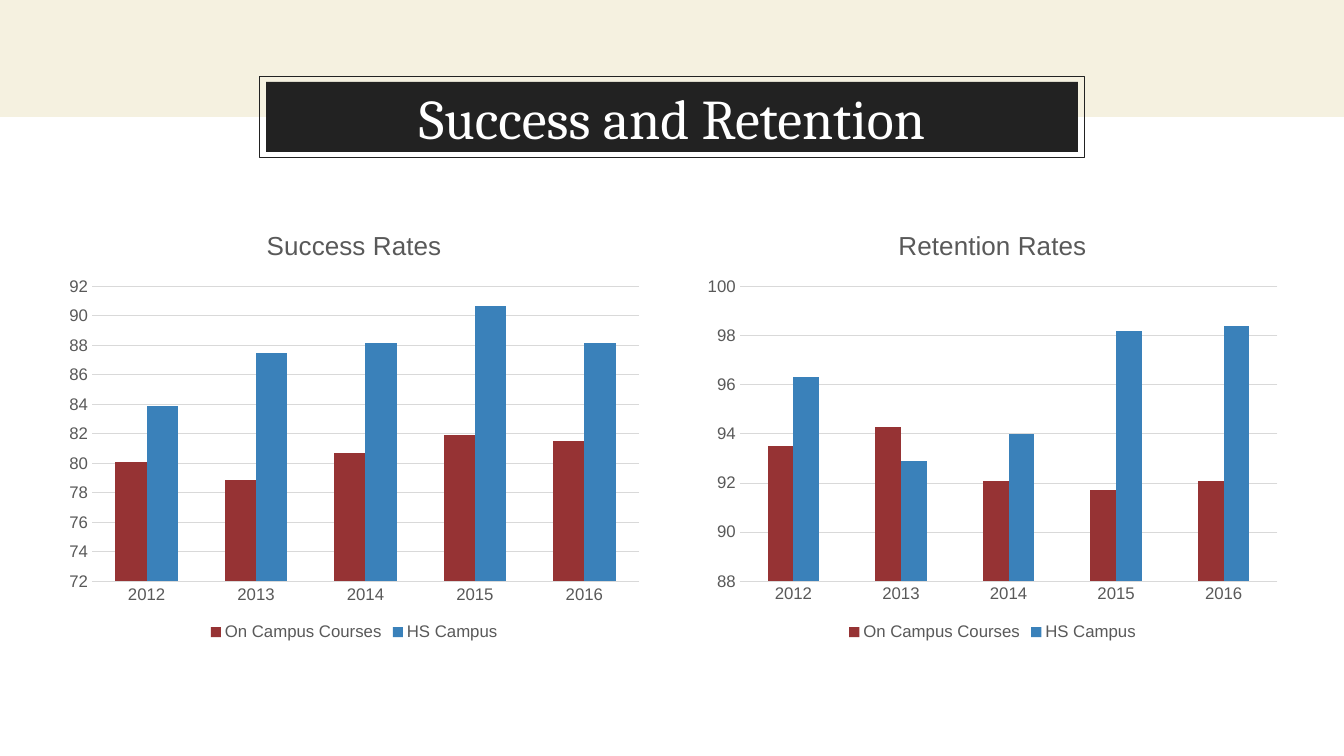
"""Build the Success and Retention slide with its two column charts."""
from pptx import Presentation
from pptx.chart.data import CategoryChartData
from pptx.dml.color import RGBColor
from pptx.enum.chart import XL_CHART_TYPE, XL_LEGEND_POSITION, XL_TICK_MARK
from pptx.enum.shapes import MSO_SHAPE
from pptx.enum.text import MSO_ANCHOR, MSO_AUTO_SIZE, PP_ALIGN
from pptx.util import Pt

CREAM = RGBColor(0xF5, 0xF1, 0xE0)
INK = RGBColor(0x22, 0x22, 0x22)
WHITE = RGBColor(0xFF, 0xFF, 0xFF)
BLACK = RGBColor(0, 0, 0)
GRAY = RGBColor(0x59, 0x59, 0x59)
RULE = RGBColor(0xD9, 0xD9, 0xD9)
RED = RGBColor(0x96, 0x33, 0x34)
BLUE = RGBColor(0x3A, 0x81, 0xBA)

HEADING = "Success and Retention"
YEARS = ["2012", "2013", "2014", "2015", "2016"]
GROUPS = [("On Campus Courses", RED), ("HS Campus", BLUE)]
RATES = [
    {
        "title": "Success Rates",
        "values": [(80.1, 78.9, 80.7, 81.9, 81.5), (83.9, 87.5, 88.2, 90.7, 88.2)],
        "range": (72, 92),
        "gap": 150,
    },
    {
        "title": "Retention Rates",
        "values": [(93.5, 94.3, 92.1, 91.7, 92.1), (96.3, 92.9, 94.0, 98.2, 98.4)],
        "range": (88, 100),
        "gap": 219,
    },
]

SLIDE_W, SLIDE_H = 960, 540
BAND_H = 83.5
FRAME_TOP, FRAME_W, FRAME_H = 54.7, 589.8, 57.8
TITLE_TOP, TITLE_W, TITLE_H = 58.4, 580, 50.2
CHART_LEFT, CHART_TOP, CHART_W, CHART_H = 41, 149.8, 424, 311
CHART_STEP = 456

HEADING_FONT = {"name": "Cambria", "size": Pt(40), "bold": False}
CHART_FONT = {"name": "Arial", "size": Pt(10)}
LABEL_FONT = {"name": "Arial", "size": Pt(12), "bold": False}
CHART_TITLE_FONT = {"name": "Arial", "size": Pt(18.6), "bold": False}
HEADING_FRAME = {
    "auto_size": MSO_AUTO_SIZE.NONE,
    "word_wrap": True,
    "vertical_anchor": MSO_ANCHOR.MIDDLE,
    **{f"margin_{side}": Pt(7.2) for side in ("left", "top", "right", "bottom")},
}
TICKS = {"major_tick_mark": XL_TICK_MARK.NONE, "minor_tick_mark": XL_TICK_MARK.NONE}
LEGEND = {"position": XL_LEGEND_POSITION.BOTTOM, "include_in_layout": False}


def apply(target, values):
    for name, value in values.items():
        setattr(target, name, value)


def style_font(font, values, color):
    apply(font, values)
    font.color.rgb = color


def style_line(line, color):
    line.color.rgb = color
    line.width = Pt(0.75)


def centered_box(top, width, height):
    return [Pt(v) for v in ((SLIDE_W - width) / 2, top, width, height)]


def add_backdrop(shapes):
    band = shapes.add_shape(MSO_SHAPE.RECTANGLE, *centered_box(0, SLIDE_W, BAND_H))
    band.fill.solid()
    band.fill.fore_color.rgb = CREAM
    band.line.fill.background()
    frame = shapes.add_shape(
        MSO_SHAPE.RECTANGLE, *centered_box(FRAME_TOP, FRAME_W, FRAME_H)
    )
    frame.fill.background()
    style_line(frame.line, INK)
    for part in (band, frame):
        part.shadow.inherit = False


def add_heading(shapes):
    heading = shapes.title
    box = centered_box(TITLE_TOP, TITLE_W, TITLE_H)
    apply(heading, dict(zip(("left", "top", "width", "height"), box)))
    heading.fill.solid()
    heading.fill.fore_color.rgb = INK
    apply(heading.text_frame, HEADING_FRAME)
    paragraph = heading.text_frame.paragraphs[0]
    paragraph.alignment = PP_ALIGN.CENTER
    run = paragraph.add_run()
    run.text = HEADING
    style_font(run.font, HEADING_FONT, WHITE)
    heading.element.getparent().append(heading.element)


def add_rates(shapes, rates, left):
    data = CategoryChartData(number_format="General")
    data.categories = YEARS
    for (group, _), values in zip(GROUPS, rates["values"]):
        data.add_series(group, values)
    box = [Pt(v) for v in (left, CHART_TOP, CHART_W, CHART_H)]
    chart = shapes.add_chart(XL_CHART_TYPE.COLUMN_CLUSTERED, *box, data).chart
    style_font(chart.font, CHART_FONT, BLACK)

    chart.has_title = True
    chart.chart_title.include_in_layout = False
    caption = chart.chart_title.text_frame.paragraphs[0].add_run()
    caption.text = rates["title"]
    style_font(caption.font, CHART_TITLE_FONT, GRAY)

    chart.has_legend = True
    apply(chart.legend, LEGEND)
    style_font(chart.legend.font, LABEL_FONT, GRAY)

    for axis in (chart.category_axis, chart.value_axis):
        apply(axis, TICKS)
        style_font(axis.tick_labels.font, LABEL_FONT, GRAY)
    style_line(chart.category_axis.format.line, RULE)
    low, high = rates["range"]
    scale = {"minimum_scale": low, "maximum_scale": high, "major_unit": 2}
    apply(chart.value_axis, scale)
    chart.value_axis.format.line.fill.background()
    style_line(chart.value_axis.major_gridlines.format.line, RULE)

    plot = chart.plots[0]
    apply(plot, {"gap_width": rates["gap"], "overlap": 0, "vary_by_categories": False})
    for columns, (_, color) in zip(plot.series, GROUPS):
        columns.format.fill.solid()
        columns.format.fill.fore_color.rgb = color
        columns.invert_if_negative = False


def main():
    deck = Presentation()
    apply(deck, {"slide_width": Pt(SLIDE_W), "slide_height": Pt(SLIDE_H)})
    shapes = deck.slides.add_slide(deck.slide_layouts[5]).shapes
    add_backdrop(shapes)
    add_heading(shapes)
    for index, rates in enumerate(RATES):
        add_rates(shapes, rates, CHART_LEFT + index * CHART_STEP)
    deck.save("out.pptx")


if __name__ == "__main__":
    main()
